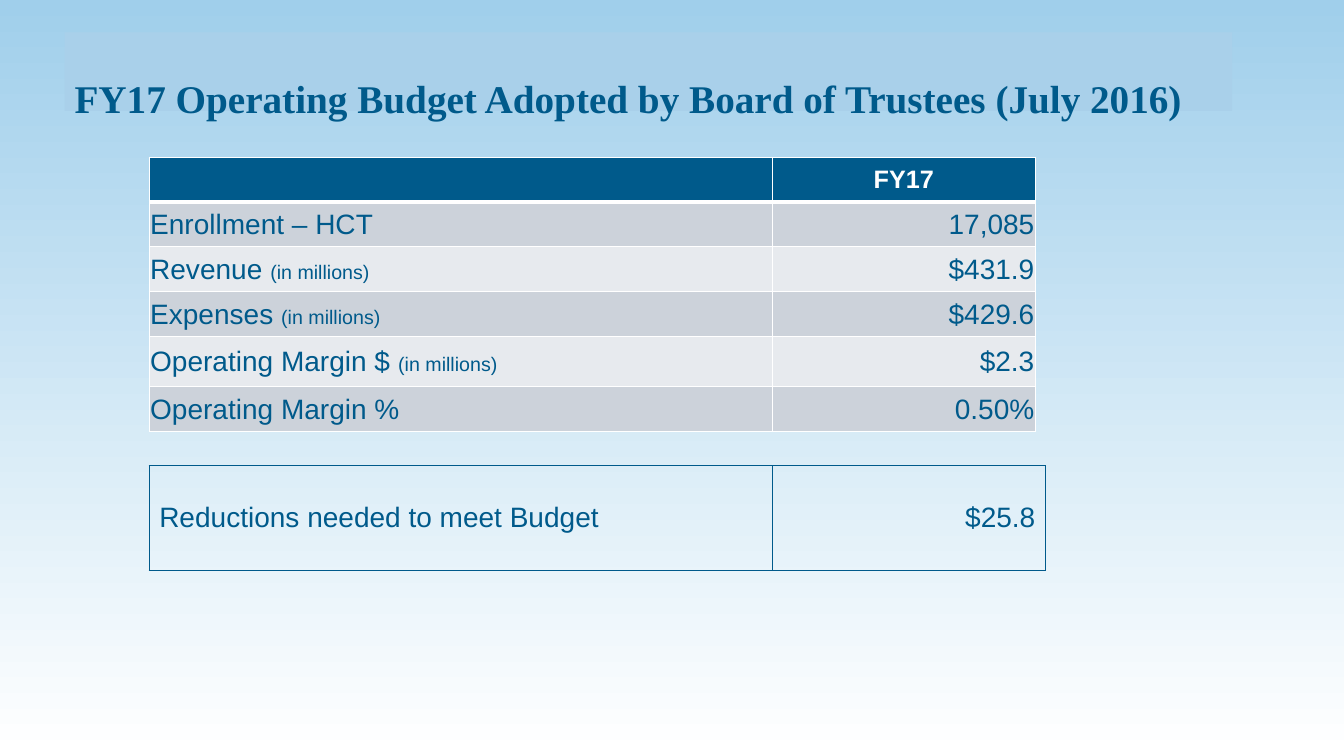
from lxml import etree
from pptx import Presentation
from pptx.dml.color import RGBColor
from pptx.enum.text import MSO_ANCHOR, MSO_AUTO_SIZE, PP_ALIGN
from pptx.oxml.ns import qn
from pptx.util import Inches, Pt

LEFT, CENTER, RIGHT = PP_ALIGN.LEFT, PP_ALIGN.CENTER, PP_ALIGN.RIGHT
TOP, MIDDLE = MSO_ANCHOR.TOP, MSO_ANCHOR.MIDDLE
NO_AUTOSIZE = MSO_AUTO_SIZE.NONE
LAYOUT_TITLE_ONLY = 5

NAVY, WHITE, TITLE_FILL = "005A8B", "FFFFFF", "A9D0EA"
BANDS = ("CCD2DA", "E7EAEE")
SKY = "A0CFEB"


def color(value):
    return RGBColor.from_string(value)


def add_text(paragraph, text, size=20, font="Arial", fill=NAVY, bold=False, align=LEFT):
    paragraph.alignment = align
    run = paragraph.add_run()
    run.text = text
    run.font.size = Pt(size)
    run.font.name = font
    run.font.bold = bold
    run.font.color.rgb = color(fill)


class BudgetSlide:
    """Holds the slide; all lengths are percentages of its width or height."""

    def __init__(self, presentation):
        self.width = presentation.slide_width
        self.height = presentation.slide_height
        self.slide = presentation.slides.add_slide(
            presentation.slide_layouts[LAYOUT_TITLE_ONLY])

    def across(self, percent):
        return round(self.width * percent / 100)

    def down(self, percent):
        return round(self.height * percent / 100)

    def background(self, top_color, bottom_color):
        fill = self.slide.background.fill
        fill.gradient()
        fill.gradient_angle = 270
        for stop, value in zip(fill.gradient_stops, (top_color, bottom_color)):
            stop.color.rgb = color(value)

    def title(self, text, left, top, width, height):
        shape = self.slide.shapes.title
        shape.left, shape.top = self.across(left), self.down(top)
        shape.width, shape.height = self.across(width), self.down(height)
        shape.fill.solid()
        shape.fill.fore_color.rgb = color(TITLE_FILL)
        frame = shape.text_frame
        frame.auto_size = NO_AUTOSIZE
        frame.word_wrap = True
        frame.vertical_anchor = TOP
        frame.margin_top, frame.margin_bottom = self.down(5.6), 0
        add_text(frame.paragraphs[0], text, size=28, font="Times New Roman", bold=True)

    def table(self, left, top, columns, rows):
        shape = self.slide.shapes.add_table(
            len(rows), len(columns), self.across(left), self.down(top),
            self.across(sum(columns)), self.down(sum(rows)))
        table = shape.table
        table.first_row = table.horz_banding = False
        for column, width in zip(table.columns, columns):
            column.width = self.across(width)
        for row, height in zip(table.rows, rows):
            row.height = self.down(height)
        return table

    def cell(self, cell, runs, line, fill=None, margin=None, bottom_width=1, align=LEFT):
        cell.vertical_anchor = MIDDLE
        if margin is not None:
            cell.margin_left = cell.margin_right = cell.margin_top = margin
            cell.margin_bottom = 0
        for text, style in runs:
            add_text(cell.text_frame.paragraphs[0], text, align=align, **style)
        # Borders come before the fill in the cell properties
        properties = cell._tc.get_or_add_tcPr()
        for side in ("lnL", "lnR", "lnT", "lnB"):
            points = bottom_width if side == "lnB" else 1
            border = etree.SubElement(properties, qn("a:" + side), w=str(Pt(points)))
            solid = etree.SubElement(border, qn("a:solidFill"))
            etree.SubElement(solid, qn("a:srgbClr"), val=line)
        if fill:
            cell.fill.solid()
            cell.fill.fore_color.rgb = color(fill)
        else:
            cell.fill.background()


def main():
    presentation = Presentation()
    presentation.slide_width, presentation.slide_height = Inches(13.33), Inches(7.5)
    page = BudgetSlide(presentation)
    page.background(SKY, WHITE)
    page.title("FY17 Operating Budget Adopted by Board of Trustees (July 2016)",
               4.8, 4.27, 86.87, 10.4)

    # Budget table
    items = [
        ("Enrollment – HCT", "", "17,085"),
        ("Revenue ", "(in millions)", "$431.9"),
        ("Expenses ", "(in millions)", "$429.6"),
        ("Operating Margin $ ", "(in millions)", "$2.3"),
        ("Operating Margin %", "", "0.50%"),
    ]
    table_left, label_width, margin = 11.1, 46.36, Inches(0.01)
    budget = page.table(table_left, 20.8, [label_width, 19.58],
                        [5.93, 5.93, 5.93, 5.93, 6.67, 5.93])
    heading = ("FY17", {"size": 18, "fill": WHITE, "bold": True})
    for column, runs in enumerate(([], [heading])):
        page.cell(budget.cell(0, column), runs, WHITE, fill=NAVY, margin=margin,
                  bottom_width=3, align=CENTER)
    for row, (label, unit, amount) in enumerate(items, start=1):
        band = BANDS[(row - 1) % 2]
        label_runs = [(label, {})] + ([(unit, {"size": 14})] if unit else [])
        page.cell(budget.cell(row, 0), label_runs, WHITE, fill=band, margin=margin)
        page.cell(budget.cell(row, 1), [(amount, {})], WHITE, fill=band,
                  margin=margin, align=RIGHT)

    # Reductions table
    reductions = page.table(table_left, 61.6, [label_width, 20.33], [13.87])
    page.cell(reductions.cell(0, 0), [("Reductions needed to meet Budget", {})], NAVY)
    page.cell(reductions.cell(0, 1), [("$25.8", {})], NAVY, align=RIGHT)

    presentation.save("out.pptx")


if __name__ == "__main__":
    main()
